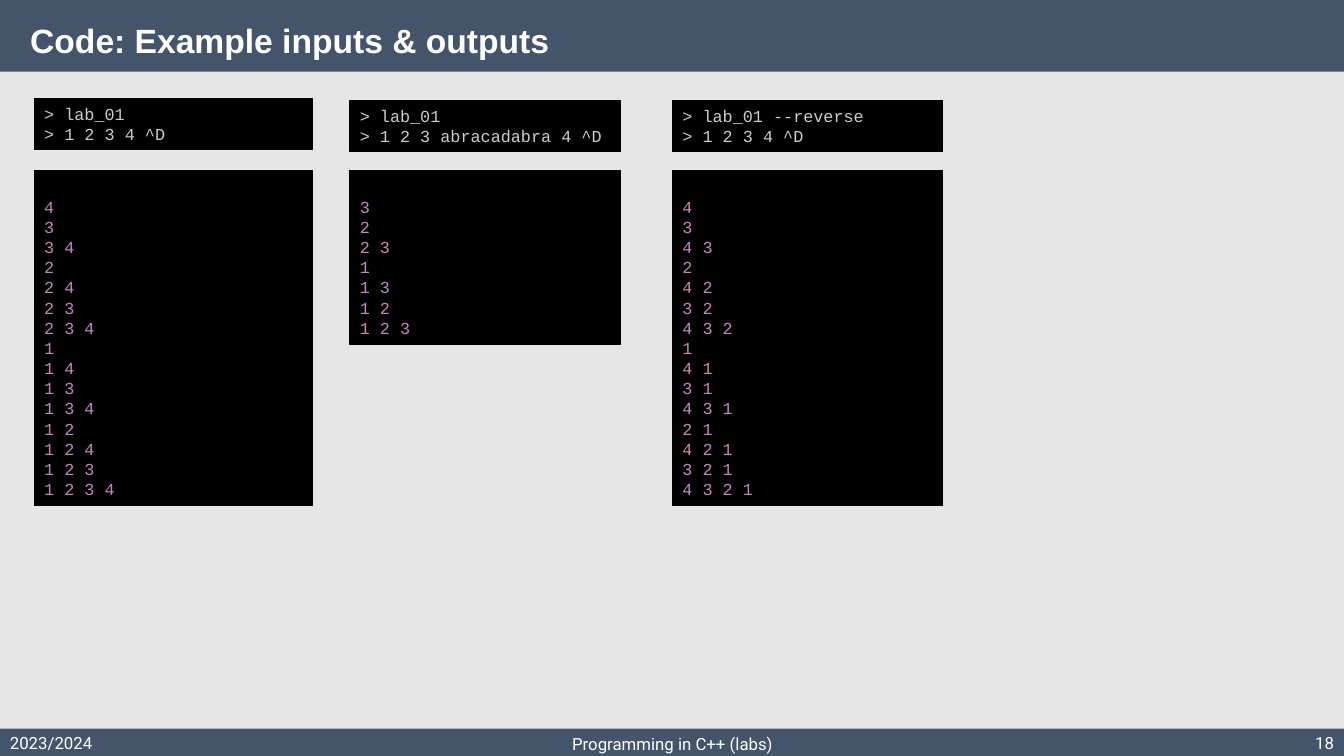
from pptx import Presentation
from pptx import util as u
from pptx.dml.color import RGBColor
from pptx.enum import shapes, text

SLATE = RGBColor(0x44, 0x54, 0x6A)
PAPER = RGBColor(0xE7, 0xE6, 0xE6)
WHITE = RGBColor(0xFF, 0xFF, 0xFF)
BLACK = RGBColor(0x00, 0x00, 0x00)
SILVER = RGBColor(0xCC, 0xCC, 0xCC)
ORCHID = RGBColor(0xC5, 0x86, 0xC0)

WIDTH, HEIGHT = 13.33, 7.5
TITLE_H, FOOTER_H = 0.71, 0.27
OUTPUT_TOP, COMMAND_H, LINE_H = 1.69, 0.5, 0.2
PAD, BLANK_LINE = 0.05, 0.21

TITLE = "Code: Example inputs & outputs"
LEFT, CENTER, RIGHT = text.PP_ALIGN.LEFT, text.PP_ALIGN.CENTER, text.PP_ALIGN.RIGHT
FOOTERS = [
    ("2023/2024", 0, 7.22, 3, LEFT),
    ("Programming in C++ (labs)", 4.42, 7.23, 4.5, CENTER),
    ("18", WIDTH - 3, 7.22, 3, RIGHT),
]
EXAMPLES = [
    (0.34, 0.98, 2.76, ["> lab_01", "> 1 2 3 4 ^D"],
     ["4", "3", "3 4", "2", "2 4", "2 3", "2 3 4", "1", "1 4", "1 3",
      "1 3 4", "1 2", "1 2 4", "1 2 3", "1 2 3 4"]),
    (3.47, 1, 2.68, ["> lab_01", "> 1 2 3 abracadabra 4 ^D"],
     ["3", "2", "2 3", "1", "1 3", "1 2", "1 2 3"]),
    (6.67, 1, 2.68, ["> lab_01 --reverse", "> 1 2 3 4 ^D"],
     ["4", "3", "4 3", "2", "4 2", "3 2", "4 3 2", "1", "4 1", "3 1",
      "4 3 1", "2 1", "4 2 1", "3 2 1", "4 3 2 1"]),
]

TITLE_FONT = {"name": "Arial", "size": u.Pt(24), "bold": True}
FOOTER_FONT = {"name": "Roboto", "size": u.Pt(12)}
CODE_FONT = {"name": "Courier New", "size": u.Pt(12)}


def add_bar(s, box, fill, outlined=False):
    sp = s.shapes.add_shape(shapes.MSO_SHAPE.RECTANGLE, *map(u.Inches, box))
    sp.shadow.inherit = False
    sp.fill.solid()
    sp.fill.fore_color.rgb = fill
    if outlined:
        sp.line.color.rgb = fill
        sp.line.width = u.Pt(0.75)
    else:
        sp.line.fill.background()
    return sp


def write(sp, lines, font, color, align=LEFT, left=0.1, top=PAD):
    tf = sp.text_frame
    frame = {"word_wrap": True, "vertical_anchor": text.MSO_ANCHOR.TOP,
             "margin_left": u.Inches(left), "margin_right": u.Inches(0.1),
             "margin_top": u.Inches(top), "margin_bottom": u.Inches(PAD)}
    for key, value in frame.items():
        setattr(tf, key, value)
    for i, line in enumerate(lines):
        p = tf.add_paragraph() if i else tf.paragraphs[0]
        p.alignment = align
        r = p.add_run()
        r.text = line
        for key, value in font.items():
            setattr(r.font, key, value)
        r.font.color.rgb = color


def main():
    prs = Presentation()
    prs.slide_width, prs.slide_height = u.Inches(WIDTH), u.Inches(HEIGHT)
    s = prs.slides.add_slide(prs.slide_layouts[6])
    s.background.fill.solid()
    s.background.fill.fore_color.rgb = PAPER

    add_bar(s, (0, HEIGHT - FOOTER_H, WIDTH, FOOTER_H), SLATE)
    title = add_bar(s, (0, 0, WIDTH, TITLE_H), SLATE)
    write(title, [TITLE], TITLE_FONT, WHITE, left=0.3, top=0.2)

    for label, x, y, w, align in FOOTERS:
        sp = s.shapes.add_textbox(*map(u.Inches, (x, y, w, FOOTER_H)))
        write(sp, [label], FOOTER_FONT, WHITE, align)

    for x, y, w, command, output in EXAMPLES:
        output_h = len(output) * LINE_H + BLANK_LINE + 2 * PAD + 0.02
        sp = add_bar(s, (x, OUTPUT_TOP, w, output_h), BLACK, True)
        write(sp, output, CODE_FONT, ORCHID, top=PAD + BLANK_LINE)
        sp = add_bar(s, (x, y, w, COMMAND_H), BLACK, True)
        write(sp, command, CODE_FONT, SILVER)

    prs.save("out.pptx")


if __name__ == "__main__":
    main()
